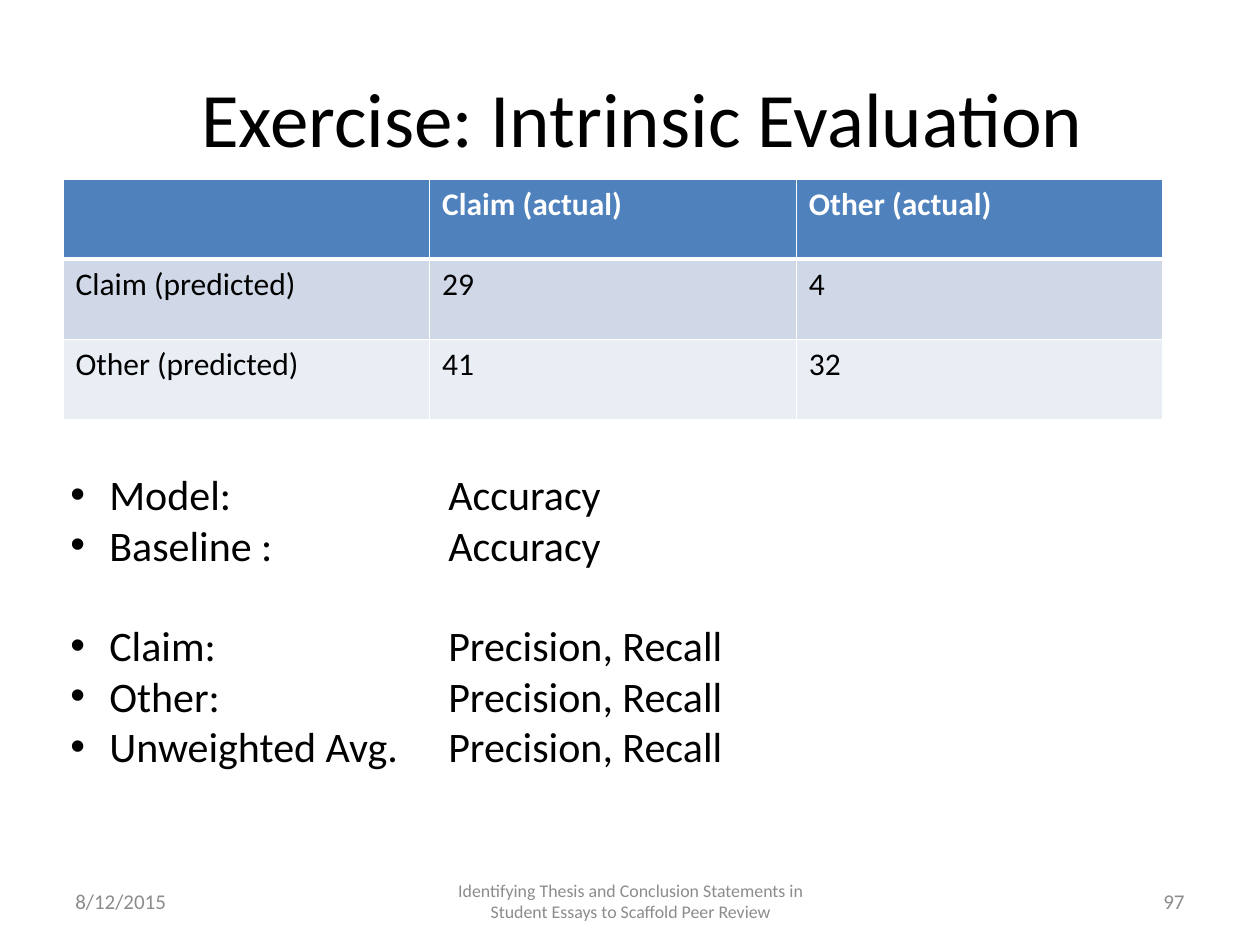
from pptx import Presentation
from pptx.dml.color import RGBColor
from pptx.enum import text
from pptx.oxml.ns import qn
from pptx.util import Inches, Pt
from lxml import etree

FONT = "Calibri"
COLORS = {"ink": "000000", "white": "FFFFFF", "footer": "8C8C8C",
          "header": "4F81BD", "band_dark": "D0D8E8", "band_light": "E9EDF4"}
ALIGN = text.PP_ALIGN

# text, (left, top, width, height), size, colour, alignment
LABELS = [
    ("8/12/2015", (0.5, 6.95, 2.33, 0.4), 12, "footer", ALIGN.LEFT),
    ("Identifying Thesis and Conclusion Statements in Student Essays "
     "to Scaffold Peer Review", (3.42, 6.95, 3.17, 0.4), 10.2, "footer", ALIGN.CENTER),
    ("97", (7.17, 6.95, 2.33, 0.4), 12, "footer", ALIGN.RIGHT),
    ("Exercise: Intrinsic Evaluation", (0.5, 0.3, 9.2, 1.25), 44, "ink", ALIGN.CENTER),
]
CONFUSION = [
    ("", "Claim (actual)", "Other (actual)"),
    ("Claim (predicted)", "29", "4"),
    ("Other (predicted)", "41", "32"),
]
ROW_FILLS = ["header", "band_dark", "band_light"]
MEASURE_GROUPS = [
    [("Model:", "Accuracy"), ("Baseline :", "Accuracy")],
    [("Claim:", "Precision, Recall"), ("Other:", "Precision, Recall"),
     ("Unweighted Avg.", "Precision, Recall")],
]
GROUP_GAP = 28.8
INDENT = Inches(0.31)
MEASURE_TAB = Inches(3)


def add_span(para, words, size, color, bold=False):
    span = para.add_run()
    span.text = words
    span.font.name, span.font.size, span.font.bold = FONT, Pt(size), bold
    span.font.color.rgb = RGBColor.from_string(COLORS[color])


def add_frame(page, place, anchor):
    frame = page.shapes.add_textbox(*map(Inches, place)).text_frame
    frame.word_wrap = True
    frame.vertical_anchor = anchor
    return frame


def set_borders(cell, bottom):
    """White lines on all four sides; the bottom width is in points."""
    props = cell._tc.get_or_add_tcPr()
    for side, width in (("L", 1), ("R", 1), ("T", 1), ("B", bottom)):
        line = etree.SubElement(props, qn(f"a:ln{side}"), w=str(Pt(width)))
        fill = etree.SubElement(line, qn("a:solidFill"))
        etree.SubElement(fill, qn("a:srgbClr"), val=COLORS["white"])


def add_confusion_table(page):
    place = map(Inches, (0.5, 1.42, 8.73, 1.91))
    table = page.shapes.add_table(len(CONFUSION), len(CONFUSION[0]), *place).table
    for r, row in enumerate(CONFUSION):
        header = r == 0
        for c, words in enumerate(row):
            cell = table.cell(r, c)
            # the header's lower edge is shared with the first body row
            set_borders(cell, 3 if header else 1)
            if r == 1:
                cell._tc.tcPr.find(qn("a:lnT")).set("w", str(Pt(3)))
            cell.fill.solid()
            cell.fill.fore_color.rgb = RGBColor.from_string(COLORS[ROW_FILLS[r]])
            if words:
                add_span(cell.text_frame.paragraphs[0], words, 18,
                         "white" if header else "ink", header)


def make_bullet(para):
    """Hanging bullet with one tab stop for the measure column."""
    props = para._p.get_or_add_pPr()
    props.set("marL", str(INDENT))
    props.set("indent", str(-INDENT))
    etree.SubElement(props, qn("a:buFont"), typeface="Arial")
    etree.SubElement(props, qn("a:buChar"), char="•")
    tabs = etree.SubElement(props, qn("a:tabLst"))
    etree.SubElement(tabs, qn("a:tab"), pos=str(MEASURE_TAB), algn="l")


def add_measures(page):
    frame = add_frame(page, (0.46, 3.67, 8.73, 2.52), text.MSO_ANCHOR.TOP)
    para = frame.paragraphs[0]
    for g, group in enumerate(MEASURE_GROUPS):
        for i, (target, measure) in enumerate(group):
            if g or i:
                para = frame.add_paragraph()
            if g and i == 0:
                para.space_before = Pt(GROUP_GAP)
            make_bullet(para)
            add_span(para, f"{target}\t{measure}", 24, "ink")


def main():
    deck = Presentation()
    deck.slide_width, deck.slide_height = Inches(10), Inches(7.5)
    page = deck.slides.add_slide(deck.slide_layouts[6])
    for words, place, size, color, align in LABELS:
        para = add_frame(page, place, text.MSO_ANCHOR.MIDDLE).paragraphs[0]
        para.alignment = align
        add_span(para, words, size, color)
    add_confusion_table(page)
    add_measures(page)
    deck.save("out.pptx")


if __name__ == "__main__":
    main()
